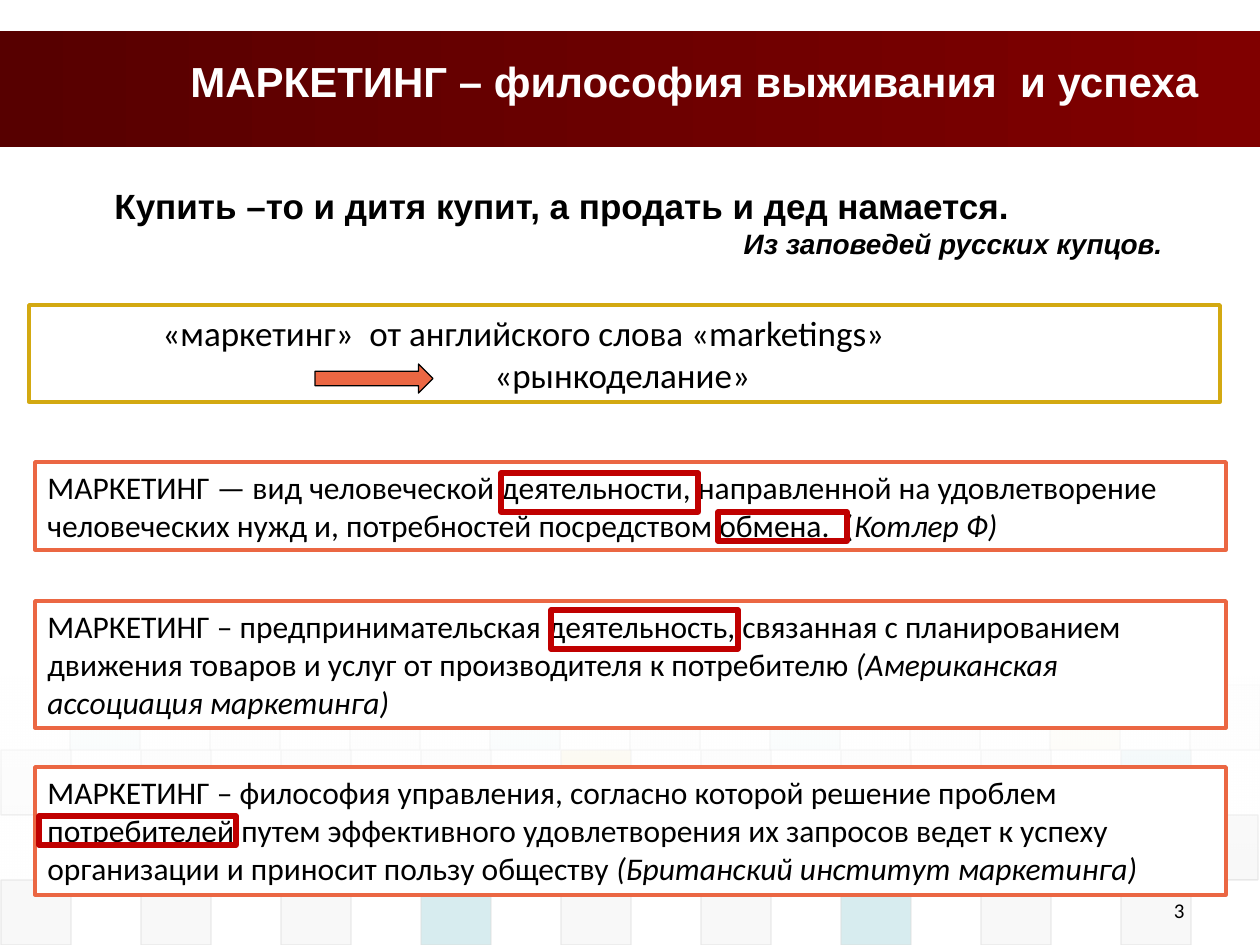
from lxml import etree
from pptx import Presentation
from pptx.dml.color import RGBColor
from pptx.enum.shapes import MSO_SHAPE
from pptx.enum.text import MSO_ANCHOR, MSO_AUTO_SIZE, PP_ALIGN
from pptx.oxml.ns import qn
from pptx.util import Emu, Pt

RECTANGLE, RIGHT_ARROW = MSO_SHAPE.RECTANGLE, MSO_SHAPE.RIGHT_ARROW
LEFT, RIGHT = PP_ALIGN.LEFT, PP_ALIGN.RIGHT
TOP, FIT_SHAPE = MSO_ANCHOR.TOP, MSO_AUTO_SIZE.SHAPE_TO_FIT_TEXT

COLORS = {
    "black": "000000", "white": "FFFFFF", "maroon": "570000", "red": "800000",
    "gray": "DDDDDD", "pale": "EAEAEA", "gold": "D3A911", "teal": "38A3B2",
    "orange": "EB6743", "crimson": "C00000",
}
EMU_PER_PX = 914400 / 126


def px(value):
    return Emu(round(value * EMU_PER_PX))


def rgb(name):
    return RGBColor.from_string(COLORS[name])


class SlideBuilder:
    def __init__(self, slide):
        self.slide = slide

    def set_alpha(self, parent, percents):
        colors = parent.iter(qn("a:srgbClr"))
        for color, percent in zip(colors, percents):
            alpha = etree.SubElement(color, qn("a:alpha"))
            alpha.set("val", str(percent * 1000))

    def shape(self, box, fill=None, line=None, width=0.75, kind=RECTANGLE):
        shape = self.slide.shapes.add_shape(kind, *map(px, box))
        shape.shadow.inherit = False
        if fill:
            shape.fill.solid()
            shape.fill.fore_color.rgb = rgb(fill)
        else:
            shape.fill.background()
        if line:
            shape.line.color.rgb = rgb(line)
            shape.line.width = Pt(width)
        else:
            shape.line.fill.background()
        return shape

    def gradient(self, box, colors, angle=0, alphas=()):
        shape = self.shape(box)
        shape.fill.gradient()
        shape.fill.gradient_angle = angle
        for stop, color in zip(shape.fill.gradient_stops, colors):
            stop.color.rgb = rgb(color)
        self.set_alpha(shape._element.spPr, alphas)

    def tile(self, left, top, color, opacity):
        shape = self.shape((left, top, 70, 65), color, "gray")
        self.set_alpha(shape._element.spPr, (opacity, 60))

    def fill_text(self, shape, paragraphs):
        """Each paragraph is (runs, font style, alignment, left indent in px)."""
        frame = shape.text_frame
        frame.word_wrap = True
        frame.auto_size = FIT_SHAPE
        frame.vertical_anchor = TOP
        for index, (runs, style, alignment, indent) in enumerate(paragraphs):
            paragraph = frame.add_paragraph() if index else frame.paragraphs[0]
            paragraph.alignment = alignment
            if indent:
                paragraph._p.get_or_add_pPr().set("marL", str(px(indent)))
            name, size, color, bold = style
            for text, italic in runs:
                run = paragraph.add_run()
                run.text = text
                run.font.name = name
                run.font.size = Pt(size)
                run.font.color.rgb = rgb(color)
                run.font.bold = bold
                run.font.italic = italic

    def text(self, box, paragraphs):
        self.fill_text(self.slide.shapes.add_textbox(*map(px, box)), paragraphs)

    def panel(self, box, line, paragraphs):
        self.fill_text(self.shape(box, "white", line, 2), paragraphs)


# Tile rows: left, top, opacity, colours
TILE_PITCH = 140
TILE_ROWS = [
    (70, 685, 5, ["teal", "pale", "pale", "teal", "gray", "teal", "pale", "gold", "pale"]),
    (1, 750, 10, ["gray"] * 4 + ["gold"] + ["gray"] * 3 + ["teal"]),
    (1188, 815, 20, ["gray"]),
    (1, 880, 20, ["gray"] * 3 + ["teal"] + ["gray"] * 2 + ["teal"] + ["gray"] * 2),
]

# Definitions: top, height, wording, source
DEFINITIONS = [
    (462, 88, "МАРКЕТИНГ — вид человеческой деятельности, направленной на "
     "удовлетворение человеческих нужд и, потребностей посредством обмена.  (",
     "Котлер Ф)"),
    (601, 127, "МАРКЕТИНГ – предпринимательская деятельность, связанная с "
     "планированием движения товаров и услуг от производителя к потребителю ",
     "(Американская ассоциация маркетинга)"),
    (767, 128, "МАРКЕТИНГ – философия управления, согласно которой решение "
     "проблем потребителей путем эффективного удовлетворения их запросов ведет "
     "к успеху организации и приносит пользу обществу ",
     "(Британский институт маркетинга)"),
]

KEYWORD_FRAMES = [
    (501, 473, 197, 39), (718, 512, 129, 29), (551, 610, 187, 39), (39, 816, 197, 29),
]


def main():
    presentation = Presentation()
    presentation.slide_width, presentation.slide_height = px(1260), px(945)
    slide = presentation.slides.add_slide(presentation.slide_layouts[6])
    builder = SlideBuilder(slide)

    # Background: title band and fading tiles
    builder.gradient((0, 31, 1260, 116), ("maroon", "red"))
    for left, top, opacity, colors in TILE_ROWS:
        for column, color in enumerate(colors):
            builder.tile(left + column * TILE_PITCH, top, color, opacity)
    builder.gradient((0, 677, 1260, 204), ("white", "white"), 270, (90, 0))

    # Page number, title and epigraph
    builder.text((903, 891, 294, 42),
                 [([("3", False)], ("Calibri", 12, "black", False), RIGHT, 0)])
    builder.text((178, 49, 1082, 63),
                 [([("МАРКЕТИНГ – философия выживания  и успеха", False)],
                   ("Arial", 24, "white", True), LEFT, 0)])
    builder.text((83, 178, 1092, 89), [
        ([("Купить –то и дитя купит, а продать и дед намается.", False)],
         ("Arial", 20, "black", True), LEFT, 19),
        ([("Из заповедей русских купцов.", True)],
         ("Arial", 16, "black", True), RIGHT, 0),
    ])

    # Origin of the word
    origin_style = ("Calibri", 20, "black", False)
    builder.panel((29, 305, 1191, 97), "gold", [
        ([("«маркетинг»  от английского слова «marketings»", False)],
         origin_style, LEFT, 121),
        ([("«рынкоделание»", False)], origin_style, LEFT, 453),
    ])
    builder.shape((315, 364, 118, 29), "orange", "black", kind=RIGHT_ARROW)

    # Definitions with framed keywords
    for top, height, wording, source in DEFINITIONS:
        builder.panel((35, top, 1191, height), "orange",
                      [([(wording, False), (source, True)],
                        ("Calibri", 18, "black", False), LEFT, 0)])
    for box in KEYWORD_FRAMES:
        builder.shape(box, line="crimson", width=3)

    presentation.save("out.pptx")


if __name__ == "__main__":
    main()
